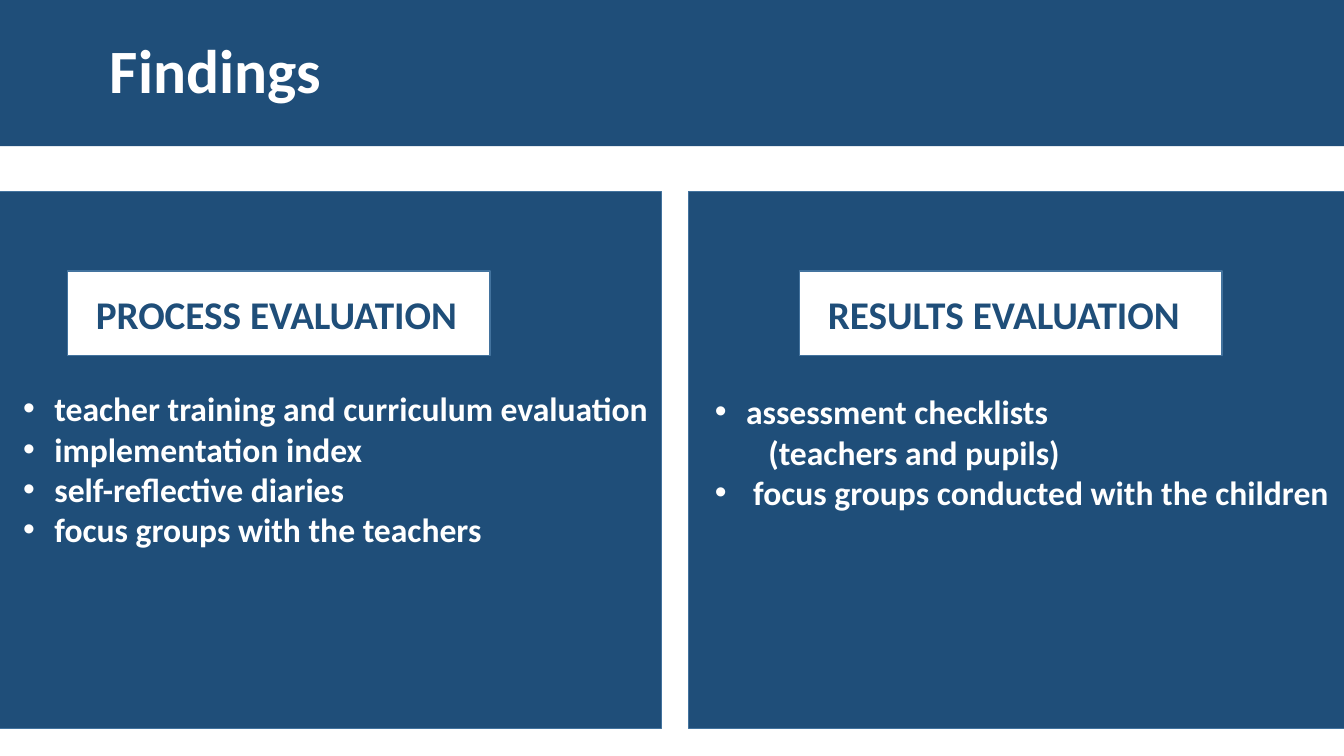
from lxml import etree
from pptx import Presentation
from pptx.dml.color import RGBColor
from pptx.enum.shapes import MSO_SHAPE
from pptx.enum.text import MSO_ANCHOR, MSO_AUTO_SIZE, PP_ALIGN
from pptx.oxml.ns import qn
from pptx.util import Inches, Pt

COLORS = {"navy": "1F4E79", "edge": "43739E", "white": "FFFFFF"}
FONT = "Calibri"
PANEL_W, PANEL_H = 6.67, 5.33
LABEL_W, LABEL_H = 4.19, 0.84


def rgb(name):
    return RGBColor.from_string(COLORS[name])


def place(sp, left, top, width, height):
    sp.left, sp.top = Inches(left), Inches(top)
    sp.width, sp.height = Inches(width), Inches(height)


def format_text(p, size, color):
    p.alignment = PP_ALIGN.LEFT
    p.space_before = Pt(0)
    for r in p.runs:
        r.font.name, r.font.size, r.font.bold = FONT, Pt(size), True
        r.font.color.rgb = rgb(color)


def add_box(slide, left, top, width, height, fill):
    sp = slide.shapes.add_shape(MSO_SHAPE.RECTANGLE, Inches(left), Inches(top),
                                Inches(width), Inches(height))
    sp.shadow.inherit = False
    sp.fill.solid()
    sp.fill.fore_color.rgb = rgb(fill)
    sp.line.color.rgb = rgb("edge")
    sp.line.width = Pt(1)
    return sp


def set_bullet(p, indent, bulleted):
    pPr = p._p.get_or_add_pPr()
    pPr.set("marL", str(Inches(indent)))
    pPr.set("indent", str(-Inches(indent) if bulleted else 0))
    if bulleted:
        etree.SubElement(pPr, qn("a:buFont")).set("typeface", "Arial")
        etree.SubElement(pPr, qn("a:buChar")).set("char", "•")
    else:
        etree.SubElement(pPr, qn("a:buNone"))


def build_title(slide, text, width, height):
    sp = slide.shapes.title
    place(sp, 0, 0, width, height)
    sp.fill.solid()
    sp.fill.fore_color.rgb = rgb("navy")
    tf = sp.text_frame
    tf.text = text
    tf.auto_size = MSO_AUTO_SIZE.NONE
    tf.vertical_anchor = MSO_ANCHOR.MIDDLE
    tf.margin_left = Inches(1.09)
    p = tf.paragraphs[0]
    format_text(p, 44, "white")
    p.line_spacing = 0.9


def build_panel(slide, body, left, top, label, label_dx, list_dx, list_dy, items):
    # Background, kept behind the placeholders
    panel = add_box(slide, left, top, PANEL_W, PANEL_H, "navy")
    slide.shapes._spTree.insert(2, panel._element)

    # White heading label
    sp = add_box(slide, left + label_dx, top + 0.79, LABEL_W, LABEL_H, "white")
    tf = sp.text_frame
    tf.text = label
    tf.margin_left, tf.margin_right = Inches(0.28), 0
    tf.vertical_anchor = MSO_ANCHOR.MIDDLE
    format_text(tf.paragraphs[0], 28, "navy")

    # List of (text, indent, bulleted)
    place(body, left + list_dx, top + list_dy, 6.4, 1.72)
    tf = body.text_frame
    tf.text = "\n".join(text for text, _, _ in items)
    tf.word_wrap = True
    tf.auto_size = MSO_AUTO_SIZE.NONE
    tf.vertical_anchor = MSO_ANCHOR.TOP
    tf.margin_right = 0
    for p, (_, indent, bulleted) in zip(tf.paragraphs, items):
        format_text(p, 24, "white")
        p.line_spacing = 1.0
        set_bullet(p, indent, bulleted)


def main():
    prs = Presentation()
    prs.slide_width, prs.slide_height = Inches(13.33), Inches(7.5)
    slide = prs.slides.add_slide(prs.slide_layouts[3])
    build_title(slide, "Findings", 13.33, 1.45)

    process = ["teacher training and curriculum evaluation", "implementation index",
               "self-reflective diaries", "focus groups with the teachers"]
    results = [("assessment checklists", 0.31, True),
               ("(teachers and pupils)", 0.53, False),
               ("focus groups conducted with the children", 0.38, True)]
    build_panel(slide, slide.placeholders[1], -0.11, 1.9, "PROCESS EVALUATION",
                0.78, 0.24, 1.9, [(text, 0.31, True) for text in process])
    build_panel(slide, slide.placeholders[2], 6.83, 1.9, "RESULTS EVALUATION",
                1.1, 0.16, 1.93, results)
    prs.save("out.pptx")


if __name__ == "__main__":
    main()
